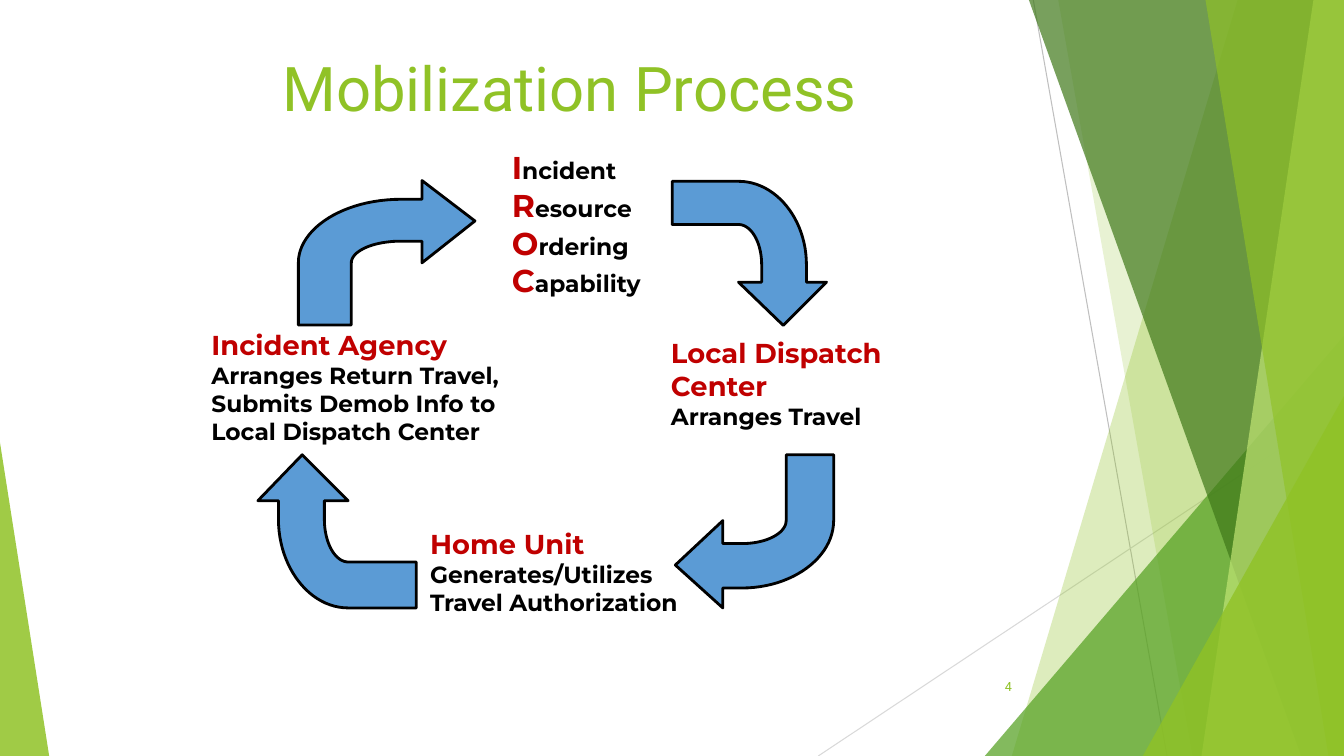
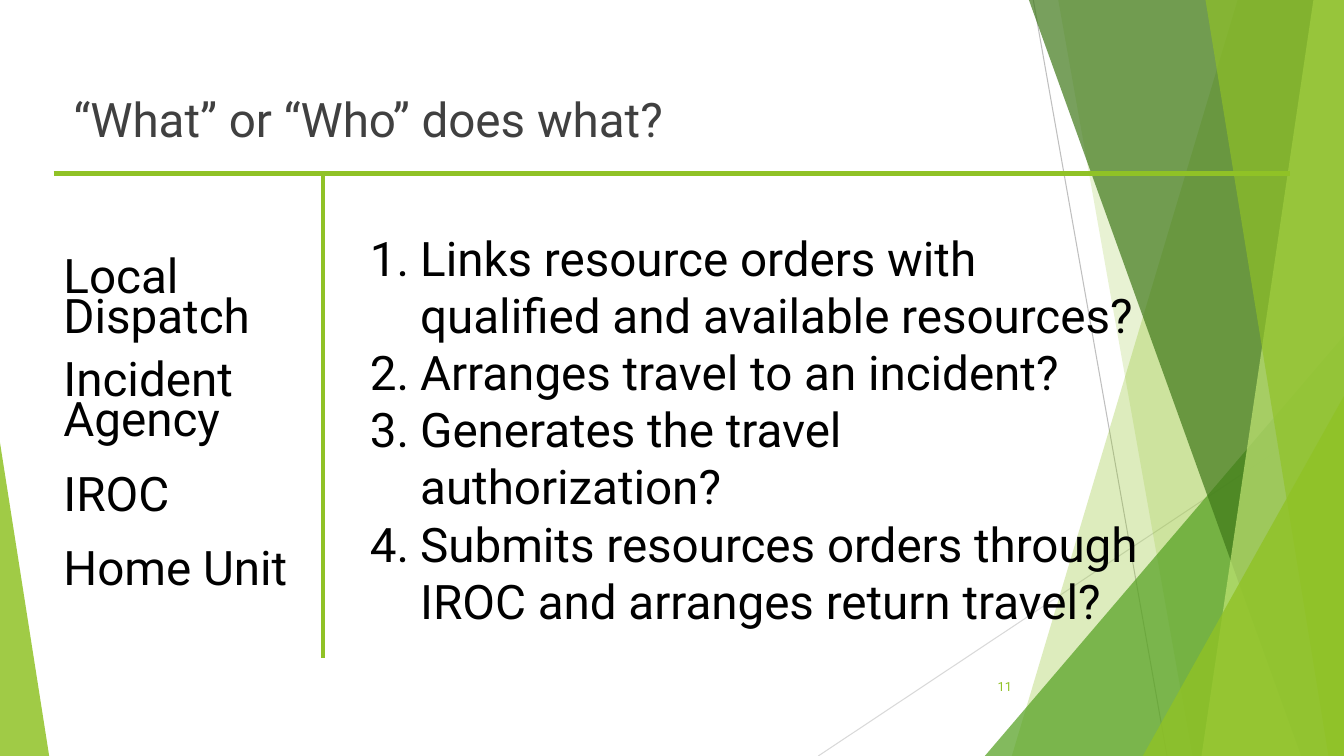
from dataclasses import dataclass

from lxml.etree import SubElement
from pptx import Presentation
from pptx.dml.color import RGBColor
from pptx.enum.shapes import MSO_CONNECTOR, MSO_SHAPE
from pptx.enum.text import MSO_ANCHOR, MSO_AUTO_SIZE, PP_ALIGN
from pptx.oxml.ns import qn
from pptx.slide import Slide, SlideLayout
from pptx.util import Cm, Pt

WIDE, HIGH = 33.87, 19.05
Point = tuple[float, float]


@dataclass(frozen=True)
class Theme:
    lime: str = "90C226"
    leaf: str = "54A021"
    moss: str = "3F7819"
    pale: str = "C0E474"
    blue: str = "5B9BD5"
    red: str = "C00000"
    black: str = "000000"
    dark: str = "404040"
    grey: str = "BFBFBF"
    mist: str = "D9D9D9"
    sans: str = "Roboto"
    bold: str = "Montserrat"
    title: float = 44
    body: float = 34
    cap: float = 22.5
    head: float = 19.5
    text: float = 16.7
    page: float = 9


THEME = Theme()


@dataclass(frozen=True)
class Box:
    left: float
    top: float
    width: float
    height: float

    def cm(self) -> tuple[Cm, Cm, Cm, Cm]:
        return Cm(self.left), Cm(self.top), Cm(self.width), Cm(self.height)


@dataclass(frozen=True)
class Band:
    top: float
    foot: float
    color: str
    alpha: int


@dataclass(frozen=True)
class Spike:
    box: Box
    tip: float
    color: str
    alpha: int


@dataclass(frozen=True)
class Rule:
    start: Point
    end: Point
    color: str
    width: float


@dataclass(frozen=True)
class Stop:
    box: Box
    heads: tuple[str, ...]
    lines: tuple[str, ...]


@dataclass(frozen=True)
class Item:
    text: str
    before: float = 0
    pitch: float = 1.0


RAYS = (
    Rule((26.04, 0), (29.41, HIGH), THEME.grey, 0.75),
    Rule((WIDE, 10.24), (20.62, HIGH), THEME.mist, 0.75),
)
FACETS = (
    Band(31.19, 25.5, THEME.lime, 30),
    Band(26.67, 30.05, THEME.lime, 20),
    Spike(Box(24.82, 8.46, 9.05, 10.59), 1, THEME.leaf, 72),
    Band(25.93, 32.79, THEME.moss, 70),
    Band(33.1, 30.28, THEME.pale, 70),
    Band(30.38, 33.48, THEME.lime, 65),
    Spike(Box(28.8, 9.98, 5.07, 9.07), 1, THEME.lime, 80),
    Spike(Box(0, 11.15, 1.24, 7.9), 0, THEME.lime, 85),
)
RULES = (
    Rule((1.35, 4.37), (32.51, 4.37), THEME.lime, 3),
    Rule((8.13, 4.37), (8.13, 16.59), THEME.lime, 3),
)
STOPS = (
    Stop(Box(16.81, 8.38, 8.33, 3.96), ("Local Dispatch", "Center"), ("Arranges Travel",)),
    Stop(Box(10.74, 13.18, 9.22, 3.58), ("Home Unit",),
         ("Generates/Utilizes", "Travel Authorization")),
    Stop(Box(5.23, 8.18, 8.59, 4.27), ("Incident Agency",),
         ("Arranges Return Travel,", "Submits Demob Info to", "Local Dispatch Center")),
)
TURNS = (
    Box(7.52, 4.55, 4.45, 3.64),
    Box(16.94, 4.57, 3.89, 3.63),
    Box(17.02, 11.46, 3.99, 3.86),
    Box(6.5, 11.46, 3.99, 3.86),
)
WORDS = ("Incident", "Resource", "Ordering", "Capability")
UNITS = (
    Item("Local Dispatch", pitch=0.7),
    Item("Incident Agency", before=17, pitch=0.7),
    Item("IROC", before=14),
    Item("Home Unit", before=12),
)
TASKS = (
    "Links resource orders with qualified and available resources?",
    "Arranges travel to an incident?",
    "Generates the travel authorization?",
    "Submits resources orders through IROC and arranges return travel?",
)


def rgb(code: str) -> RGBColor:
    return RGBColor.from_string(code)


def paint(shape, color: str, alpha: int = 100) -> None:
    shape.shadow.inherit = False
    shape.fill.solid()
    shape.fill.fore_color.rgb = rgb(color)
    shape.line.fill.background()
    if alpha < 100:
        tint = shape.fill._xPr.find(qn("a:solidFill")).find(qn("a:srgbClr"))
        SubElement(tint, qn("a:alpha")).set("val", str(alpha * 1000))


def outline(shapes, points: list[Point]):
    spots = [(Cm(x), Cm(y)) for x, y in points]
    form = shapes.build_freeform(*spots[0], scale=1.0)
    form.add_line_segments(spots[1:], close=True)
    return form.convert_to_shape()


def draw_rule(shapes, rule: Rule) -> None:
    ends = [Cm(n) for n in rule.start + rule.end]
    line = shapes.add_connector(MSO_CONNECTOR.STRAIGHT, *ends)
    line.line.color.rgb = rgb(rule.color)
    line.line.width = Pt(rule.width)
    SubElement(line._element.spPr, qn("a:effectLst"))


def draw_facet(shapes, facet: Band | Spike) -> None:
    if isinstance(facet, Band):
        shape = outline(shapes, [(facet.top, 0), (WIDE, 0), (WIDE, HIGH), (facet.foot, HIGH)])
    else:
        shape = shapes.add_shape(MSO_SHAPE.ISOSCELES_TRIANGLE, *facet.box.cm())
        shape.adjustments[0] = facet.tip
    paint(shape, facet.color, facet.alpha)


def dress(layout: SlideLayout, slide: Slide) -> None:
    group = slide.shapes.add_group_shape()
    for ray in RAYS:
        draw_rule(group.shapes, ray)
    for facet in FACETS:
        draw_facet(group.shapes, facet)
    layout.shapes._spTree.insert(2, group._element)


def style(run, size: float, color: str, font: str = THEME.sans, bold: bool = False) -> None:
    run.font.name = font
    run.font.size = Pt(size)
    run.font.bold = bold
    run.font.color.rgb = rgb(color)


def add_text(slide: Slide, box: Box, lines: tuple[str, ...], inset: float = 0.25):
    frame = slide.shapes.add_textbox(*box.cm()).text_frame
    frame.word_wrap = True
    frame.margin_left = frame.margin_right = Cm(inset)
    frame.margin_top = frame.margin_bottom = Cm(min(inset, 0.13))
    frame.text = "\n".join(lines)
    return frame


def set_title(slide: Slide, text: str, box: Box, size: float, color: str) -> None:
    title = slide.shapes.title
    title.left, title.top, title.width, title.height = box.cm()
    frame = title.text_frame
    frame.text = text
    frame.word_wrap = True
    frame.auto_size = MSO_AUTO_SIZE.NONE
    frame.vertical_anchor = MSO_ANCHOR.TOP
    frame.paragraphs[0].alignment = PP_ALIGN.LEFT
    style(frame.paragraphs[0].runs[0], size, color)


def add_page(slide: Slide, page: int) -> None:
    frame = add_text(slide, Box(23.85, 16.79, 1.9, 1.02), (str(page),))
    frame.vertical_anchor = MSO_ANCHOR.MIDDLE
    frame.paragraphs[0].alignment = PP_ALIGN.RIGHT
    style(frame.paragraphs[0].runs[0], THEME.page, THEME.lime)


def curve(a: Point, b: Point, c: Point, d: Point, steps: int = 24) -> list[Point]:
    spots = []
    for i in range(steps + 1):
        t = i / steps
        parts = ((1 - t) ** 3, 3 * t * (1 - t) ** 2, 3 * t * t * (1 - t), t ** 3)
        x, y = (sum(w * n for w, n in zip(parts, axis)) for axis in zip(a, b, c, d))
        spots.append((x, y))
    return spots


def draw_turn(slide: Slide, box: Box, turns: int) -> None:
    spots = [(1, 0.28), (0.7, 0), (0.7, 0.13)]
    spots += curve((0.58, 0.13), (0.26, 0.13), (0, 0.33), (0, 0.57))
    spots += [(0, 1), (0.3, 1)]
    spots += curve((0.3, 0.57), (0.3, 0.49), (0.42, 0.42), (0.58, 0.42))
    spots += [(0.7, 0.42), (0.7, 0.57)]
    for _ in range(turns):
        spots = [(1 - y, x) for x, y in spots]
    points = [(box.left + x * box.width, box.top + y * box.height) for x, y in spots]
    arrow = outline(slide.shapes, points)
    paint(arrow, THEME.blue)
    arrow.line.color.rgb = rgb(THEME.black)
    arrow.line.width = Pt(2)


def add_stop(slide: Slide, stop: Stop) -> None:
    frame = add_text(slide, stop.box, stop.heads + stop.lines, 0.1)
    for i, para in enumerate(frame.paragraphs):
        head = i < len(stop.heads)
        size, color = (THEME.head, THEME.red) if head else (THEME.text, THEME.black)
        style(para.runs[0], size, color, THEME.bold, True)


def add_words(slide: Slide) -> None:
    frame = add_text(slide, Box(12.8, 3.63, 4.78, 5.77), WORDS, 0.1)
    for para, word in zip(frame.paragraphs, WORDS):
        para.text = word[0]
        para.add_run().text = word[1:]
        style(para.runs[0], THEME.cap, THEME.red, THEME.bold, True)
        style(para.runs[1], THEME.text, THEME.black, THEME.bold, True)


def fill_cycle(slide: Slide) -> None:
    set_title(slide, "Mobilization Process", Box(6.86, 1.14, 16.66, 2.31),
              THEME.title, THEME.lime)
    add_page(slide, 4)
    add_words(slide)
    for stop in STOPS:
        add_stop(slide, stop)
    for turns, box in enumerate(TURNS):
        draw_turn(slide, box, turns)


def fill_quiz(slide: Slide) -> None:
    set_title(slide, "“What” or “Who” does what?", Box(1.6, 2.13, 28.27, 2.24),
              THEME.body, THEME.dark)
    for rule in RULES:
        draw_rule(slide.shapes, rule)
    units = add_text(slide, Box(1.35, 6.45, 6.78, 8.76), tuple(u.text for u in UNITS))
    for para, unit in zip(units.paragraphs, UNITS):
        para.line_spacing = unit.pitch
        para.space_before = Pt(unit.before)
        style(para.runs[0], THEME.body, THEME.black)
    tasks = add_text(slide, Box(9.07, 5.64, 20.04, 10.44), TASKS)
    for para in tasks.paragraphs:
        props = para._p.get_or_add_pPr()
        props.set("marL", str(Cm(1.27)))
        props.set("indent", str(-Cm(1.27)))
        SubElement(props, qn("a:buAutoNum")).set("type", "arabicPeriod")
        style(para.runs[0], THEME.body, THEME.black)
    add_page(slide, 11)


def main() -> None:
    deck = Presentation()
    deck.slide_width, deck.slide_height = Cm(WIDE), Cm(HIGH)
    layout = deck.slide_layouts[5]
    cycle, quiz = (deck.slides.add_slide(layout) for _ in range(2))
    dress(layout, cycle)
    fill_cycle(cycle)
    fill_quiz(quiz)
    deck.save("out.pptx")


if __name__ == "__main__":
    main()
